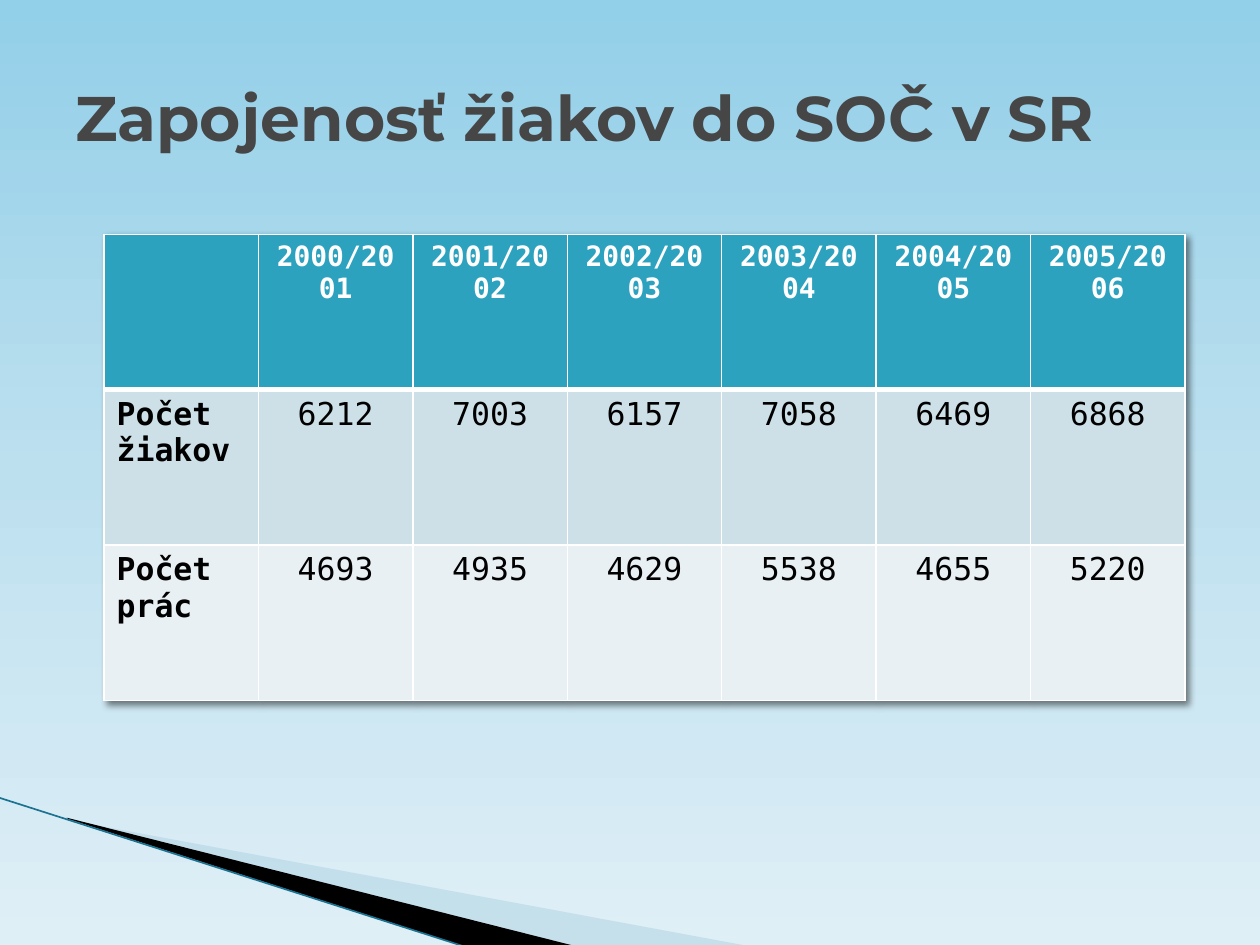
"""Build a slide with a table of pupils and works entered in SOČ by school year."""
from copy import deepcopy
from pptx import Presentation
from pptx import util as u
from pptx.dml.color import RGBColor
from pptx.enum import shapes, text
from pptx.oxml import parse_xml
from pptx.oxml.ns import nsdecls, qn

COLORS = {
    "sky": "92CFE8", "haze": "BDE0EF", "mist": "DFEFF6",
    "wave": "A0CBDC", "black": "000000", "edge": "1B7391",
    "title": "464646", "white": "FFFFFF",
    "header": "2DA2BF", "odd": "CDE0E8", "even": "E8F0F4",
}
SANS, MONO = "Montserrat", "DejaVu Sans Mono"


def rgb(name):
    return RGBColor.from_string(COLORS[name])


def add_span(para, words, font, size, color, bold):
    span = para.add_run()
    span.text = words
    span.font.name = font
    span.font.size = u.Pt(size)
    span.font.bold = bold
    span.font.color.rgb = rgb(color)


deck = Presentation()
deck.slide_width, deck.slide_height = u.Inches(10), u.Inches(7.5)
width, height = deck.slide_width, deck.slide_height
page = deck.slides.add_slide(deck.slide_layouts[6])

backdrop = page.background.fill
backdrop.gradient()
backdrop.gradient_angle = 270
stop_list = page.element.find(".//" + qn("a:gsLst"))
stop_list.append(deepcopy(stop_list[0]))
for stop, position, color in zip(backdrop.gradient_stops, (0, 0.5, 1), ("sky", "haze", "mist")):
    stop.position = position
    stop.color.rgb = rgb(color)

waves = [
    ("wave", 40, [(0.55, 6.51), (5.95, 7.51), (4.56, 7.51), (0.55, 6.5)]),
    ("black", 100, [(0.53, 6.49), (4.57, 7.51), (3.72, 7.52), (0.54, 6.5)]),
]
for color, opacity, points in waves:
    corners = [(u.Inches(x), u.Inches(y)) for x, y in points]
    builder = page.shapes.build_freeform(*corners[0])
    builder.add_line_segments(corners[1:], close=True)
    wave = builder.convert_to_shape()
    wave.shadow.inherit = False
    wave.line.fill.background()
    wave.fill.solid()
    wave.fill.fore_color.rgb = rgb(color)
    if opacity < 100:
        tint = wave.element.spPr.find(".//" + qn("a:srgbClr"))
        tint.append(parse_xml(f'<a:alpha {nsdecls("a")} val="{opacity * 1000}"/>'))

edge = page.shapes.add_connector(
    shapes.MSO_CONNECTOR.STRAIGHT,
    u.Inches(-0.01), u.Inches(6.33), u.Inches(3.71), u.Inches(7.52))
edge.line.color.rgb = rgb("edge")
edge.line.width = u.Pt(0.95)
edge.element.spPr.append(parse_xml(f'<a:effectLst {nsdecls("a")}/>'))

years = [f"{year}/{year + 1}" for year in range(2000, 2006)]
rows = [
    ["", *years],
    ["Počet žiakov", "6212", "7003", "6157", "7058", "6469", "6868"],
    ["Počet prác", "4693", "4935", "4629", "5538", "4655", "5220"],
]
table_width, table_height = u.Inches(8.58), u.Inches(3.7)
frame = page.shapes.add_table(
    len(rows), len(rows[0]), u.Inches(0.825), u.Inches(1.86), table_width, table_height)
table = frame.table
table._tbl.tblPr.insert(0, parse_xml(
    f'<a:effectLst {nsdecls("a")}><a:outerShdw blurRad="50800" dist="38100" dir="2700000" '
    f'algn="tl" rotWithShape="0"><a:srgbClr val="{COLORS["black"]}"><a:alpha val="50000"/>'
    '</a:srgbClr></a:outerShdw></a:effectLst>'))
for row_index, (values, fill) in enumerate(zip(rows, ("header", "odd", "even"))):
    is_header = row_index == 0
    borders = {"L": 1, "R": 1, "T": 3 if row_index == 1 else 1, "B": 3 if is_header else 1}
    for column_index, value in enumerate(values):
        cell = table.cell(row_index, column_index)
        properties = cell._tc.get_or_add_tcPr()
        for side, points in borders.items():
            properties.append(parse_xml(
                f'<a:ln{side} {nsdecls("a")} w="{u.Pt(points)}"><a:solidFill>'
                f'<a:srgbClr val="{COLORS["white"]}"/></a:solidFill></a:ln{side}>'))
        cell.fill.solid()
        cell.fill.fore_color.rgb = rgb(fill)
        if value:
            is_label = column_index == 0
            para = cell.text_frame.paragraphs[0]
            para.alignment = text.PP_ALIGN.LEFT if is_label else text.PP_ALIGN.CENTER
            add_span(para, value, MONO, 16 if is_header else 18,
                     "white" if is_header else "black", is_header or is_label)

box = page.shapes.add_textbox(
    int(width * 0.05), int(height * 0.04), int(width * 0.9), u.Inches(1.25))
box.text_frame.word_wrap = True
box.text_frame.vertical_anchor = text.MSO_ANCHOR.MIDDLE
add_span(box.text_frame.paragraphs[0], "Zapojenosť žiakov do SOČ v SR", SANS, 36, "title", True)

deck.save("out.pptx")
